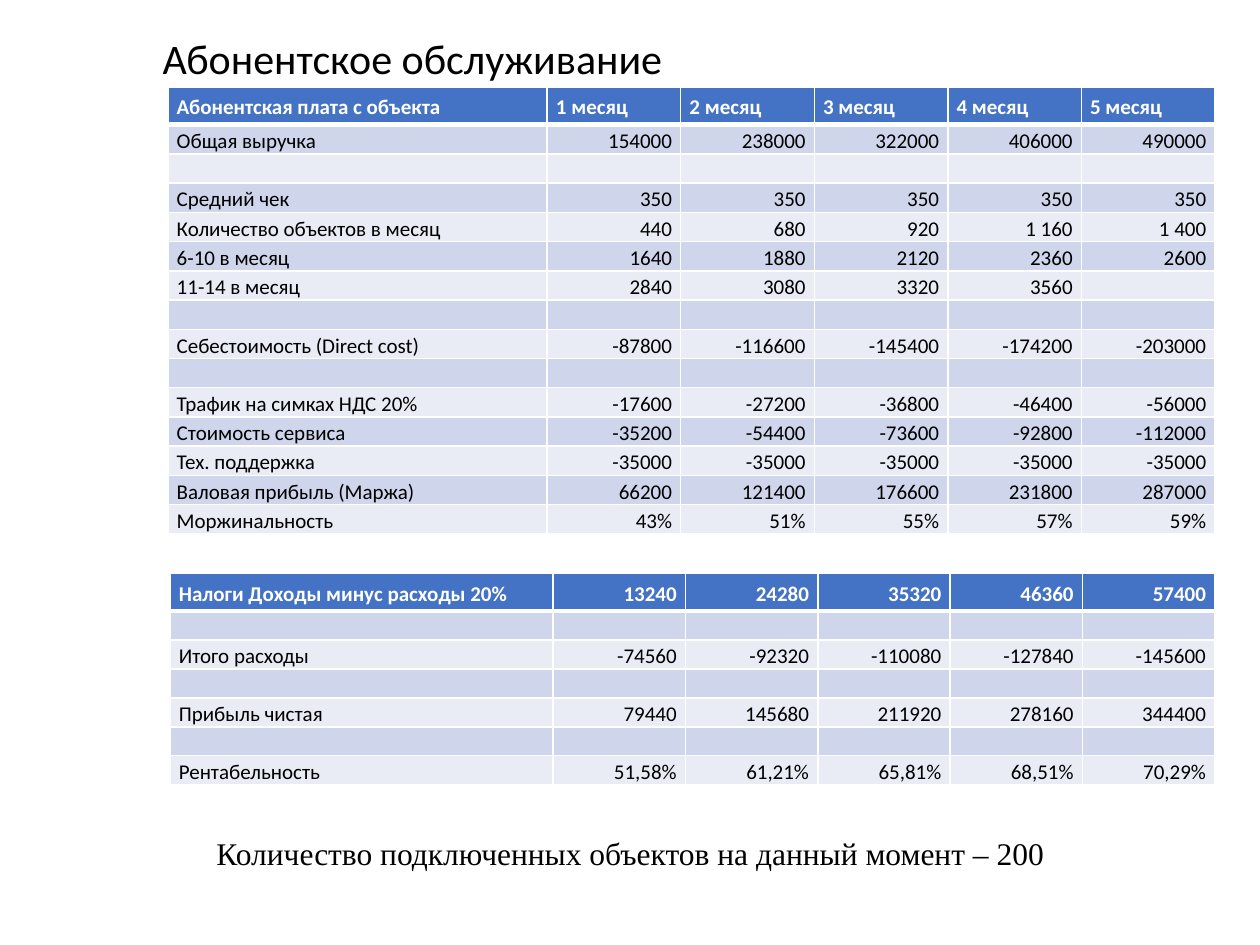
from lxml.etree import SubElement
from pptx import Presentation
from pptx.dml.color import RGBColor
from pptx.enum.text import MSO_ANCHOR, MSO_AUTO_SIZE, PP_ALIGN
from pptx.oxml.ns import qn
from pptx.util import Pt

BLACK, WHITE = "000000", "FFFFFF"
HEADER_FILL = "4472C4"
BAND_FILLS = ("CFD5EA", "E9EBF5")
COLUMN_COUNT = 6
EMPTY_ROW = [""] * COLUMN_COUNT

SUBSCRIPTION_ROWS = [
    ["Абонентская плата с объекта", "1 месяц", "2 месяц", "3 месяц", "4 месяц", "5 месяц"],
    ["Общая выручка", "154000", "238000", "322000", "406000", "490000"],
    EMPTY_ROW,
    ["Средний чек", "350", "350", "350", "350", "350"],
    ["Количество объектов в месяц", "440", "680", "920", "1 160", "1 400"],
    ["6-10 в месяц", "1640", "1880", "2120", "2360", "2600"],
    ["11-14 в месяц", "2840", "3080", "3320", "3560", ""],
    EMPTY_ROW,
    ["Себестоимость (Direct cost)", "-87800", "-116600", "-145400", "-174200", "-203000"],
    EMPTY_ROW,
    ["Трафик на симках НДС 20%", "-17600", "-27200", "-36800", "-46400", "-56000"],
    ["Стоимость сервиса", "-35200", "-54400", "-73600", "-92800", "-112000"],
    ["Тех. поддержка", "-35000", "-35000", "-35000", "-35000", "-35000"],
    ["Валовая прибыль (Маржа)", "66200", "121400", "176600", "231800", "287000"],
    ["Моржинальность", "43%", "51%", "55%", "57%", "59%"],
]

PROFIT_ROWS = [
    ["Налоги Доходы минус расходы 20%", "13240", "24280", "35320", "46360", "57400"],
    EMPTY_ROW,
    ["Итого расходы", "-74560", "-92320", "-110080", "-127840", "-145600"],
    EMPTY_ROW,
    ["Прибыль чистая", "79440", "145680", "211920", "278160", "344400"],
    EMPTY_ROW,
    ["Рентабельность", "51,58%", "61,21%", "65,81%", "68,51%", "70,29%"],
]


def color(value):
    return RGBColor.from_string(value)


def add_text(paragraph, text, size, name="Calibri", text_color=BLACK, bold=False):
    run = paragraph.add_run()
    run.text = text
    run.font.size = Pt(size)
    run.font.name = name
    run.font.bold = bold
    run.font.color.rgb = color(text_color)


def place(shape, box):
    shape.left, shape.top, shape.width, shape.height = map(Pt, box)


def add_title(slide, box, text):
    title = slide.shapes.title
    place(title, box)
    frame = title.text_frame
    frame.word_wrap = True
    frame.auto_size = MSO_AUTO_SIZE.NONE
    frame.vertical_anchor = MSO_ANCHOR.TOP
    paragraph = frame.paragraphs[0]
    paragraph.alignment = PP_ALIGN.LEFT
    paragraph.line_spacing = 0.9
    paragraph.space_before = Pt(0)
    add_text(paragraph, text, 24)


def add_caption(slide, box, text):
    frame = slide.shapes.add_textbox(*map(Pt, box)).text_frame
    frame.word_wrap = True
    frame.auto_size = MSO_AUTO_SIZE.SHAPE_TO_FIT_TEXT
    add_text(frame.paragraphs[0], text, 18, "Times New Roman")


def set_borders(cell, top, bottom):
    properties = cell._tc.get_or_add_tcPr()
    for side, width in (("L", 1), ("R", 1), ("T", top), ("B", bottom)):
        line = SubElement(properties, qn(f"a:ln{side}"), w=str(Pt(width)))
        fill = SubElement(line, qn("a:solidFill"))
        SubElement(fill, qn("a:srgbClr"), val=WHITE)


def fill_cell(cell, text, row, alignment, anchor):
    is_header = row == 0
    set_borders(cell, 3 if row == 1 else 1, 3 if is_header else 1)
    cell.fill.solid()
    cell.fill.fore_color.rgb = color(HEADER_FILL if is_header else BAND_FILLS[(row - 1) % 2])
    cell.margin_left = cell.margin_right = Pt(5)
    cell.margin_top = cell.margin_bottom = Pt(0)
    cell.vertical_anchor = anchor
    paragraph = cell.text_frame.paragraphs[0]
    paragraph.alignment = alignment
    paragraph.line_spacing = 1.15
    if text:
        add_text(paragraph, text, 12, text_color=WHITE if is_header else BLACK, bold=is_header)
    else:
        SubElement(paragraph._p, qn("a:endParaRPr"), sz="1200")


def add_finance_table(slide, box, rows, label_width, header_alignment, body_anchor):
    header_height = 21.6
    table = slide.shapes.add_table(len(rows), COLUMN_COUNT, *map(Pt, box)).table
    table.first_row = table.horz_banding = False
    value_width = (box[2] - label_width) / (COLUMN_COUNT - 1)
    body_height = (box[3] - header_height) / (len(rows) - 1)
    for index, column in enumerate(table.columns):
        column.width = Pt(value_width if index else label_width)
    for row, values in enumerate(rows):
        table.rows[row].height = Pt(body_height if row else header_height)
        for index, text in enumerate(values):
            value_alignment = PP_ALIGN.RIGHT if row else header_alignment
            alignment = value_alignment if index else PP_ALIGN.LEFT
            anchor = body_anchor if row and text else MSO_ANCHOR.MIDDLE
            fill_cell(table.cell(row, index), text, row, alignment, anchor)


def main():
    presentation = Presentation()
    presentation.slide_width, presentation.slide_height = Pt(720), Pt(540)
    slide = presentation.slides.add_slide(presentation.slide_layouts[5])
    add_title(slide, (85.7, 18, 600, 484), "Абонентское обслуживание")
    add_caption(slide, (116.6, 473, 524, 29),
                "Количество подключенных объектов на данный момент – 200")
    add_finance_table(slide, (96, 49.7, 598.3, 255.4), SUBSCRIPTION_ROWS, 216.7,
                      PP_ALIGN.LEFT, MSO_ANCHOR.MIDDLE)
    add_finance_table(slide, (97.2, 327.6, 597, 120.6), PROFIT_ROWS, 218.9,
                      PP_ALIGN.RIGHT, MSO_ANCHOR.BOTTOM)
    presentation.save("out.pptx")


if __name__ == "__main__":
    main()
